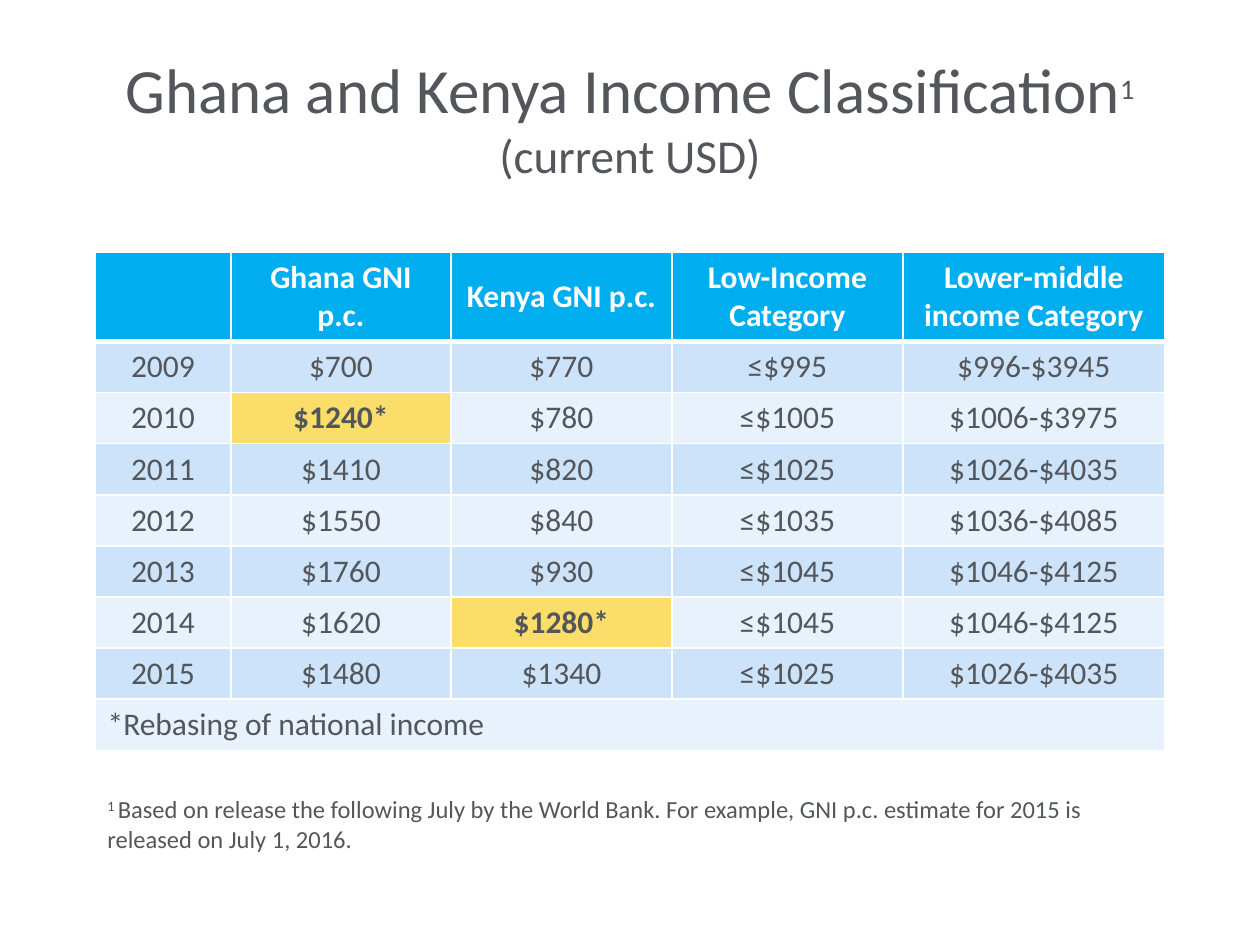
from lxml.etree import SubElement
from pptx import Presentation
from pptx.dml.color import RGBColor
from pptx.enum.text import MSO_ANCHOR as Anchor, MSO_AUTO_SIZE as AutoSize, PP_ALIGN as Align
from pptx.oxml.ns import qn
from pptx.util import Emu, Pt

EMU_PER_PX = 914400 / 126
COLORS = {
    "text": "53565A",
    "white": "FFFFFF",
    "header": "00AEEF",
    "odd": "CCE3F9",
    "even": "E7F2FC",
    "highlight": "FBDD6A",
}
HEADINGS = ["", "Ghana GNI p.c.", "Kenya GNI p.c.", "Low-Income Category", "Lower-middle income Category"]
INCOMES = [
    ["2009", "$700", "$770", "≤$995", "$996-$3945"],
    ["2010", "$1240*", "$780", "≤$1005", "$1006-$3975"],
    ["2011", "$1410", "$820", "≤$1025", "$1026-$4035"],
    ["2012", "$1550", "$840", "≤$1035", "$1036-$4085"],
    ["2013", "$1760", "$930", "≤$1045", "$1046-$4125"],
    ["2014", "$1620", "$1280*", "≤$1045", "$1046-$4125"],
    ["2015", "$1480", "$1340", "≤$1025", "$1026-$4035"],
]
REBASING_NOTE = "*Rebasing of national income"
COLUMN_WIDTHS = [136, 220, 221, 231, 262]
HEADER_HEIGHT = 88
ROW_HEIGHT = 51


def px(length):
    return Emu(round(length * EMU_PER_PX))


def add_text(paragraph, text, size=18, color="text", bold=False, raised=False):
    run = paragraph.add_run()
    run.text = text
    run.font.name = "Calibri"
    run.font.size = Pt(size)
    run.font.bold = bold
    run.font.color.rgb = RGBColor.from_string(COLORS[color])
    if raised:
        run._r.get_or_add_rPr().set("baseline", "30000")


def set_borders(cell, top=1, bottom=1):
    properties = cell._tc.get_or_add_tcPr()
    for side, width in {"lnL": 1, "lnR": 1, "lnT": top, "lnB": bottom}.items():
        line = SubElement(properties, qn(f"a:{side}"), w=str(Pt(width)))
        fill = SubElement(line, qn("a:solidFill"))
        SubElement(fill, qn("a:srgbClr"), val=COLORS["white"])


class IncomeSlide:
    """Holds the slide and draws its title, table and footnote in one style."""

    def __init__(self, presentation):
        self.slide = presentation.slides.add_slide(presentation.slide_layouts[5])

    def title(self, left, top, width, height):
        shape = self.slide.shapes.title
        shape.left, shape.top, shape.width, shape.height = map(px, (left, top, width, height))
        frame = shape.text_frame
        frame.auto_size = AutoSize.NONE
        frame.vertical_anchor = Anchor.MIDDLE
        paragraph = frame.paragraphs[0]
        paragraph.alignment = Align.CENTER
        add_text(paragraph, "Ghana and Kenya Income Classification", size=36)
        add_text(paragraph, "1", size=28, raised=True)
        paragraph.add_line_break()
        add_text(paragraph, "(current USD)", size=27)

    def cell(self, cell, text, fill, align=Align.CENTER, header=False, first=False):
        set_borders(cell, top=3 if first else 1, bottom=3 if header else 1)
        cell.fill.solid()
        cell.fill.fore_color.rgb = RGBColor.from_string(COLORS[fill])
        cell.vertical_anchor = Anchor.MIDDLE if header else Anchor.TOP
        paragraph = cell.text_frame.paragraphs[0]
        paragraph.alignment = align
        if text:
            bold = header or fill == "highlight"
            add_text(paragraph, text, color="white" if header else "text", bold=bold)

    def table(self, left, top):
        row_count = len(INCOMES) + 2
        width = sum(COLUMN_WIDTHS)
        height = HEADER_HEIGHT + ROW_HEIGHT * (row_count - 1)
        frame = self.slide.shapes.add_table(
            row_count, len(COLUMN_WIDTHS), px(left), px(top), px(width), px(height))
        table = frame.table
        table.horz_banding = False
        for column, column_width in zip(table.columns, COLUMN_WIDTHS):
            column.width = px(column_width)
        for index, row in enumerate(table.rows):
            row.height = px(ROW_HEIGHT if index else HEADER_HEIGHT)

        for index, heading in enumerate(HEADINGS):
            self.cell(table.cell(0, index), heading, "header", header=True)
        for row, values in enumerate(INCOMES, start=1):
            band = "odd" if row % 2 else "even"
            for column, value in enumerate(values):
                fill = "highlight" if value.endswith("*") else band
                self.cell(table.cell(row, column), value, fill, first=row == 1)
        note = table.cell(row_count - 1, 0)
        note.merge(table.cell(row_count - 1, len(COLUMN_WIDTHS) - 1))
        self.cell(note, REBASING_NOTE, "even", align=Align.LEFT)

    def footnote(self, left, top, width, height):
        box = self.slide.shapes.add_textbox(*map(px, (left, top, width, height)))
        frame = box.text_frame
        frame.word_wrap = True
        frame.auto_size = AutoSize.SHAPE_TO_FIT_TEXT
        paragraph = frame.paragraphs[0]
        add_text(paragraph, "1 ", size=14, raised=True)
        add_text(paragraph, "Based on release the following July by the World Bank. For example, "
                 "GNI p.c. estimate for 2015 is released on July 1, 2016.", size=14)


def main():
    presentation = Presentation()
    presentation.slide_width, presentation.slide_height = px(1260), px(945)
    slide = IncomeSlide(presentation)
    slide.title(63, 38, 1134, 158)
    slide.table(95, 252)
    slide.footnote(95, 788, 1070, 72)
    presentation.save("out.pptx")


if __name__ == "__main__":
    main()
